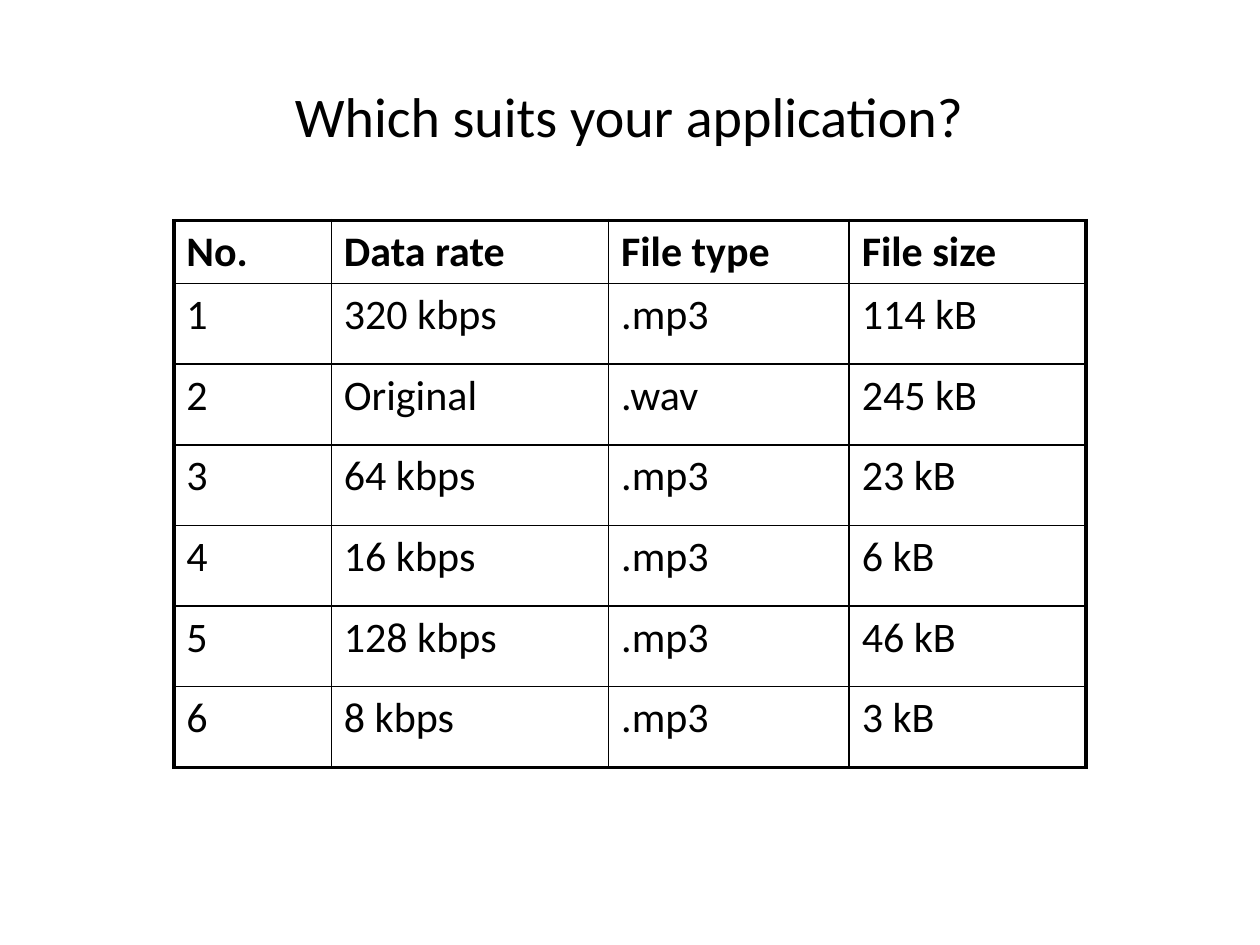
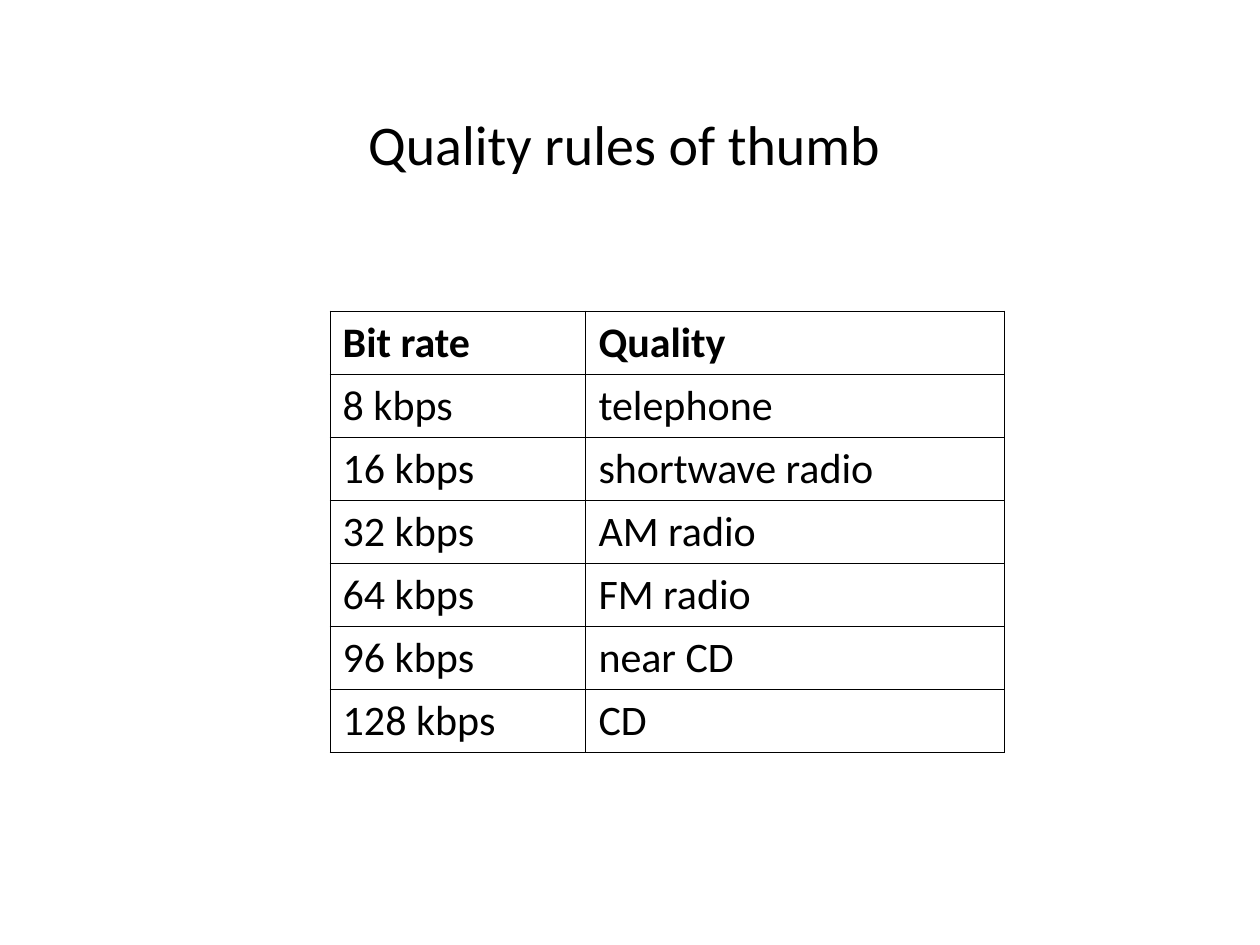
"""Build two slides on audio data rates, each a title above a ruled table."""
from lxml.etree import SubElement as Sub
from pptx import Presentation
from pptx.dml.color import RGBColor
from pptx.enum.text import MSO_ANCHOR as Anchor, MSO_AUTO_SIZE as Auto, PP_ALIGN as Align
from pptx.oxml.ns import qn
from pptx.util import Emu, Pt

BLACK = RGBColor(0, 0, 0)
WHITE = RGBColor(255, 255, 255)
SCALE = 9144

RATES = [
    ("No.", "Data rate", "File type", "File size"),
    ("1", "320 kbps", ".mp3", "114 kB"),
    ("2", "Original", ".wav", "245 kB"),
    ("3", "64 kbps", ".mp3", "23 kB"),
    ("4", "16 kbps", ".mp3", "6 kB"),
    ("5", "128 kbps", ".mp3", "46 kB"),
    ("6", "8 kbps", ".mp3", "3 kB"),
]
RULES = [
    ("Bit rate", "Quality"),
    ("8 kbps", "telephone"),
    ("16 kbps", "shortwave radio"),
    ("32 kbps", "AM radio"),
    ("64 kbps", "FM radio"),
    ("96 kbps", "near CD"),
    ("128 kbps", "CD"),
]


def px(num):
    return Emu(num * SCALE)


class Deck:
    face = "Calibri"
    head = 32
    body = 24

    def __init__(self):
        self.prs = Presentation()
        self.prs.slide_width, self.prs.slide_height = px(1000), px(750)
        self.slide = None

    def page(self):
        self.slide = self.prs.slides.add_slide(self.prs.slide_layouts[5])
        fill = self.slide.background.fill
        fill.solid()
        fill.fore_color.rgb = WHITE

    def style(self, para, size, bold=False):
        font = para.font
        font.name, font.size, font.bold = self.face, Pt(size), bold
        font.color.rgb = BLACK

    def title(self, text, left, top, width, height, wrap=True):
        shape = self.slide.shapes.title
        shape.left, shape.top = px(left), px(top)
        shape.width, shape.height = px(width), px(height)
        frame = shape.text_frame
        frame.text = text
        frame.word_wrap = wrap
        frame.auto_size = Auto.SHAPE_TO_FIT_TEXT
        frame.vertical_anchor = Anchor.TOP
        para = frame.paragraphs[0]
        para.alignment = Align.CENTER
        self.style(para, self.head)

    def edge(self, cell, side, width):
        line = Sub(cell._tc.get_or_add_tcPr(), qn(f"a:ln{side}"), w=str(Pt(width)))
        fill = Sub(line, qn("a:solidFill"))
        Sub(fill, qn("a:srgbClr"), val=str(BLACK))

    def table(self, data, left, top, cols, rows, inner, outer, anchor):
        frame = self.slide.shapes.add_table(
            len(rows), len(cols), px(left), px(top), px(sum(cols)), px(sum(rows)))
        table = frame.table
        table.first_row = table.horz_banding = False
        for col, width in zip(table.columns, cols):
            col.width = px(width)
        for row, height in zip(table.rows, rows):
            row.height = px(height)
        for y, line in enumerate(data):
            for x, text in enumerate(line):
                cell = table.cell(y, x)
                cell.text = text
                cell.vertical_anchor = anchor
                self.style(cell.text_frame.paragraphs[0], self.body, y == 0)
                rims = {"L": x == 0, "R": x == len(cols) - 1,
                        "T": y == 0, "B": y == len(rows) - 1}
                for side, rim in rims.items():
                    self.edge(cell, side, outer if rim else inner)
                cell.fill.background()


def main():
    deck = Deck()
    deck.page()
    deck.title("Which suits your application?", 221, 60, 557, 64, wrap=False)
    deck.table(RATES, 138, 175, (125, 220, 191, 188), [50] + [64] * 6,
               1, 2.25, Anchor.TOP)
    deck.page()
    deck.title("Quality rules of thumb", -9, 82, 1009, 63)
    deck.table(RULES, 262, 247, (203, 332), [50] * 7, 0.75, 0.75, Anchor.MIDDLE)
    deck.prs.save("out.pptx")


if __name__ == "__main__":
    main()
